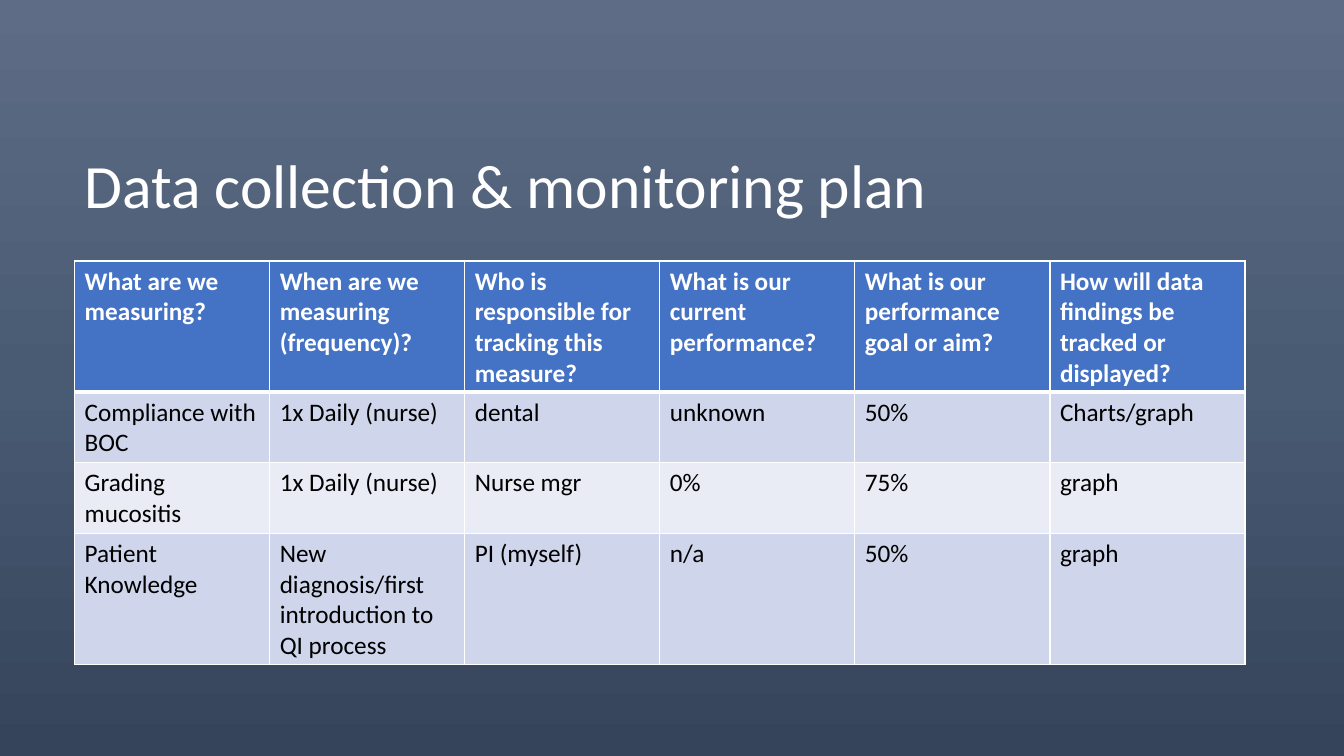
from copy import deepcopy

from pptx import Presentation
from pptx.dml.color import RGBColor
from pptx.enum.text import MSO_ANCHOR
from pptx.oxml import parse_xml
from pptx.oxml.ns import nsdecls, qn
from pptx.util import Inches, Pt

MIDDLE = MSO_ANCHOR.MIDDLE

TITLE = "Data collection & monitoring plan"
HEADINGS = [
    "What are we measuring?",
    "When are we measuring (frequency)?",
    "Who is responsible for tracking this measure?",
    "What is our current performance?",
    "What is our performance goal or aim?",
    "How will data findings be tracked or displayed?",
]
MEASURES = [
    ["Compliance with BOC", "1x Daily (nurse)", "dental", "unknown", "50%", "Charts/graph"],
    ["Grading mucositis", "1x Daily (nurse)", "Nurse mgr", "0%", "75%", "graph"],
    ["Patient Knowledge", "New diagnosis/first introduction to QI process",
     "PI (myself)", "n/a", "50%", "graph"],
]
LINES_PER_ROW = [4, 2, 2, 4]

COLORS = {
    "sky": "5E6D85", "slate": "495A73", "deep": "35445A",
    "white": "FFFFFF", "black": "000000",
    "header": "4472C4", "odd": "CFD5EA", "even": "E9EBF5",
}
BACKDROP = [(0, "sky"), (0.5, "slate"), (1, "deep")]
FONT = "Calibri"

WIDTH, HEIGHT = 13.33, 7.5
LEFT, CONTENT_WIDTH = 0.74, 11.61
TITLE_TOP, TITLE_HEIGHT = 1.17, 1.41
TABLE_TOP = 2.59
LINE_HEIGHT, CELL_PADDING = 0.3, 0.1
THIN, THICK = 1, 3


def color(name):
    return RGBColor.from_string(COLORS[name])


def write(frame, text, size=18, ink="black", bold=False, spacing=None):
    frame.word_wrap = True
    para = frame.paragraphs[0]
    para.line_spacing = spacing
    span = para.add_run()
    span.text = text
    span.font.name = FONT
    span.font.size = Pt(size)
    span.font.bold = bold
    span.font.color.rgb = color(ink)


def paint_backdrop(page):
    fill = page.background.fill
    fill.gradient()
    fill.gradient_angle = 270
    stop_list = page.element.find(".//" + qn("a:gsLst"))
    stop_list.append(deepcopy(stop_list[0]))
    for stop, (position, name) in zip(fill.gradient_stops, BACKDROP):
        stop.position = position
        stop.color.rgb = color(name)


def add_borders(cell, top, bottom):
    properties = cell._tc.get_or_add_tcPr()
    for side, points in (("L", THIN), ("R", THIN), ("T", top), ("B", bottom)):
        properties.append(parse_xml(
            f'<a:ln{side} {nsdecls("a")} w="{Pt(points)}"><a:solidFill>'
            f'<a:srgbClr val="{COLORS["white"]}"/></a:solidFill></a:ln{side}>'))


def add_title(page):
    box = page.shapes.add_textbox(
        Inches(LEFT), Inches(TITLE_TOP), Inches(CONTENT_WIDTH), Inches(TITLE_HEIGHT))
    box.text_frame.vertical_anchor = MIDDLE
    write(box.text_frame, TITLE, size=44, ink="white", spacing=0.9)


def add_plan(page):
    rows = [HEADINGS] + MEASURES
    heights = [lines * LINE_HEIGHT + CELL_PADDING for lines in LINES_PER_ROW]
    table = page.shapes.add_table(
        len(rows), len(HEADINGS), Inches(LEFT), Inches(TABLE_TOP),
        Inches(CONTENT_WIDTH), Inches(sum(heights))).table
    for column in table.columns:
        column.width = Inches(CONTENT_WIDTH / len(HEADINGS))
    for index, (texts, height) in enumerate(zip(rows, heights)):
        table.rows[index].height = Inches(height)
        heading = index == 0
        band = "header" if heading else "odd" if index % 2 else "even"
        for cell, text in zip(table.rows[index].cells, texts):
            add_borders(cell, top=THICK if index == 1 else THIN,
                        bottom=THICK if heading else THIN)
            cell.fill.solid()
            cell.fill.fore_color.rgb = color(band)
            write(cell.text_frame, text, ink="white" if heading else "black", bold=heading)


def main():
    deck = Presentation()
    deck.slide_width, deck.slide_height = Inches(WIDTH), Inches(HEIGHT)
    page = deck.slides.add_slide(deck.slide_layouts[6])
    paint_backdrop(page)
    add_title(page)
    add_plan(page)
    deck.save("out.pptx")


if __name__ == "__main__":
    main()
